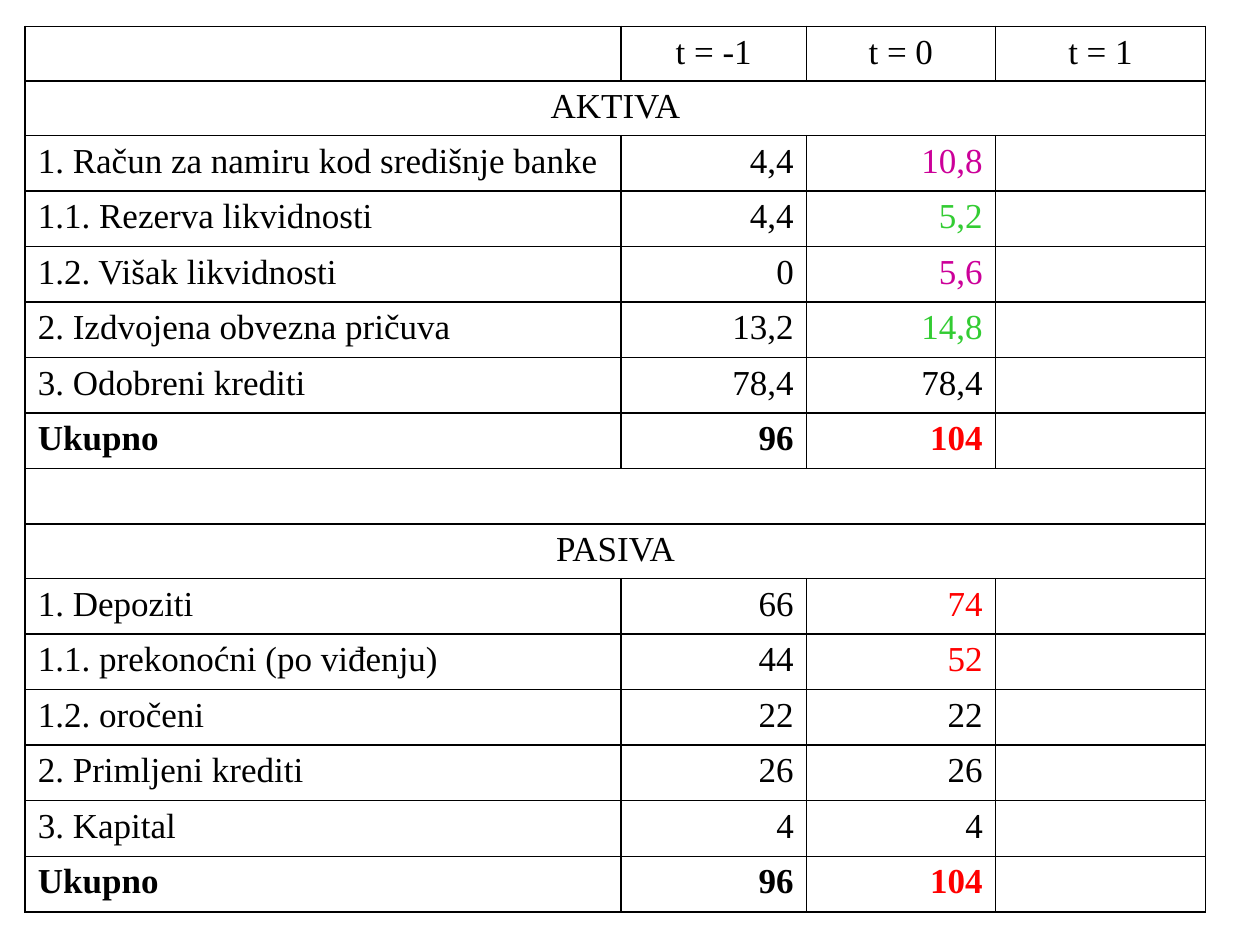
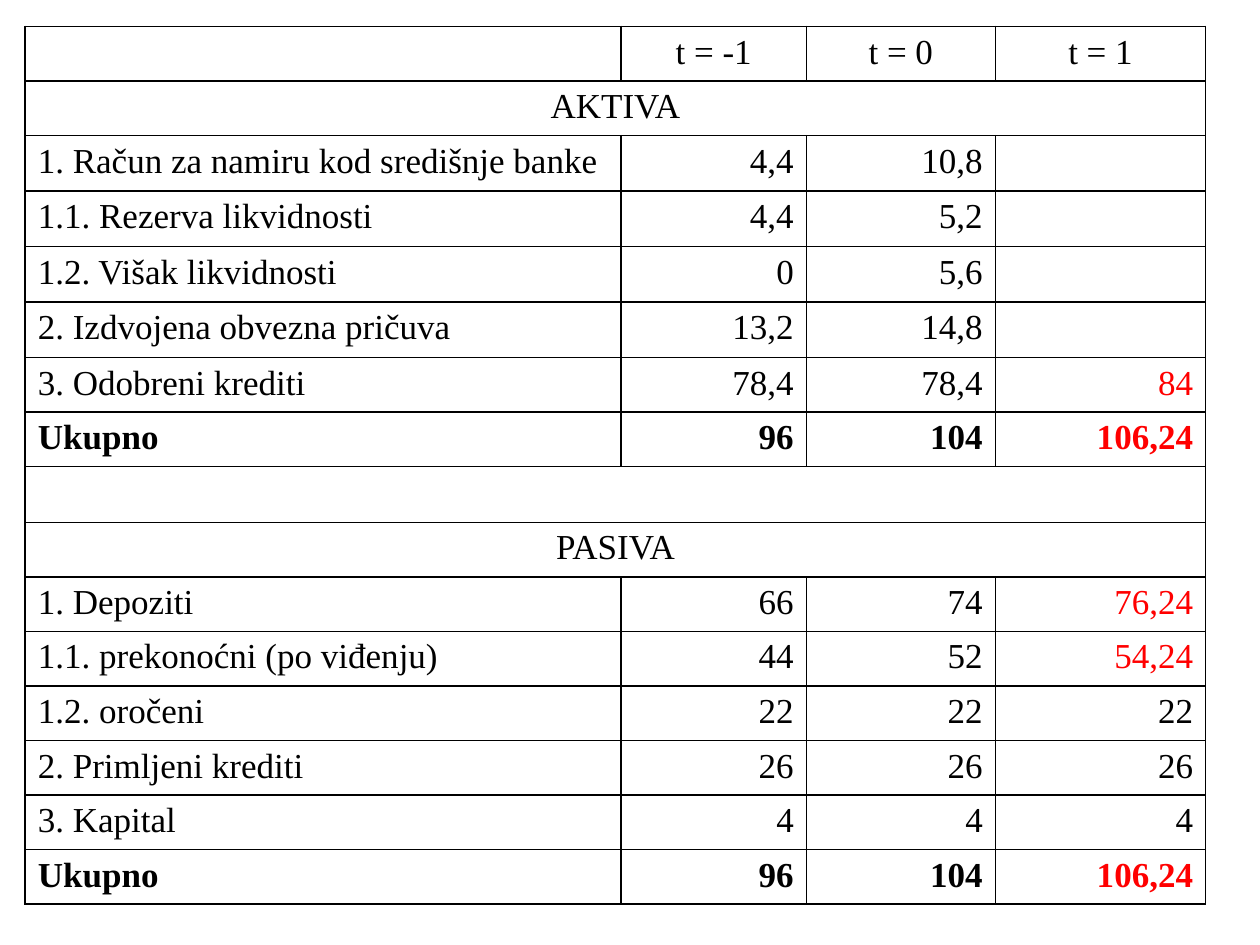
from lxml import etree
from pptx import Presentation
from pptx.dml.color import RGBColor
from pptx.enum.text import PP_ALIGN
from pptx.oxml.ns import qn
from pptx.util import Inches, Pt

LEFT, CENTER, RIGHT = PP_ALIGN.LEFT, PP_ALIGN.CENTER, PP_ALIGN.RIGHT

COLORS = {"text": "000000", "paper": "FFFFFF", "border": "000000",
          "changed": "FF0000", "surplus": "CC0099", "reserve": "33CC33"}
FONT, FONT_SIZE = "Times New Roman", Pt(20)
BORDER_WIDTH = Pt(1)

PERIODS = ["t = -1", "t = 0", "t = 1"]
TOTAL = "Ukupno"
ASSETS = [
    ("1. Račun za namiru kod središnje banke", "4,4", "10,8"),
    ("1.1. Rezerva likvidnosti", "4,4", "5,2"),
    ("1.2. Višak likvidnosti", "0", "5,6"),
    ("2. Izdvojena obvezna pričuva", "13,2", "14,8"),
    ("3. Odobreni krediti", "78,4", "78,4"),
    (TOTAL, "96", "104"),
]
LIABILITIES = [
    ("1. Depoziti", "66", "74"),
    ("1.1. prekonoćni (po viđenju)", "44", "52"),
    ("1.2. oročeni", "22", "22"),
    ("2. Primljeni krediti", "26", "26"),
    ("3. Kapital", "4", "4"),
    (TOTAL, "96", "104"),
]

# Per slide: values for t = 1, the column that carries highlights,
# and the highlight of each asset and liability row
BALANCES = [
    {
        "assets_t1": [""] * 6,
        "liabilities_t1": [""] * 6,
        "highlight_column": 2,
        "asset_colors": ["surplus", "reserve", "surplus", "reserve", "text", "changed"],
        "liability_colors": ["changed", "changed", "text", "text", "text", "changed"],
    },
    {
        "assets_t1": ["", "", "", "", "84", "106,24"],
        "liabilities_t1": ["76,24", "54,24", "22", "26", "4", "106,24"],
        "highlight_column": 3,
        "asset_colors": ["text", "text", "text", "text", "changed", "changed"],
        "liability_colors": ["changed", "changed", "text", "text", "text", "changed"],
    },
]

TABLE_LEFT, TABLE_TOP, TABLE_HEIGHT = 0.2, 0.21, 6.93
COLUMN_WIDTHS = [4.73, 1.47, 1.5, 1.67]


def add_borders(cell):
    properties = cell._tc.get_or_add_tcPr()
    for side in ("a:lnL", "a:lnR", "a:lnT", "a:lnB"):
        line = etree.SubElement(properties, qn(side), w=str(BORDER_WIDTH))
        fill = etree.SubElement(line, qn("a:solidFill"))
        etree.SubElement(fill, qn("a:srgbClr"), val=COLORS["border"])


def write(cell, text, align, color="text", bold=False):
    paragraph = cell.text_frame.paragraphs[0]
    paragraph.alignment = align
    paragraph.font.size = FONT_SIZE
    if not text:
        return
    run = paragraph.add_run()
    run.text = text
    run.font.name = FONT
    run.font.size = FONT_SIZE
    run.font.bold = bold
    run.font.color.rgb = RGBColor.from_string(COLORS[color])


def write_band(table, row, text):
    """Merge a full row and centre its heading, if any."""
    table.cell(row, 0).merge(table.cell(row, len(COLUMN_WIDTHS) - 1))
    write(table.cell(row, 0), text, CENTER)


def write_section(table, top, heading, items, t1_values, colors, highlight_column):
    """Write a heading band and its items; return the next free row."""
    write_band(table, top, heading)
    for row, (item, t1, color) in enumerate(zip(items, t1_values, colors), top + 1):
        for column, text in enumerate((*item, t1)):
            write(table.cell(row, column), text,
                  RIGHT if column else LEFT,
                  color if column == highlight_column else "text",
                  bold=item[0] == TOTAL)
    return top + 1 + len(items)


def add_balance(slide, balance):
    row_count = len(ASSETS) + len(LIABILITIES) + 4
    table = slide.shapes.add_table(
        row_count, len(COLUMN_WIDTHS), Inches(TABLE_LEFT), Inches(TABLE_TOP),
        Inches(sum(COLUMN_WIDTHS)), Inches(TABLE_HEIGHT)).table
    table.first_row = table.horz_banding = False
    for column, width in zip(table.columns, COLUMN_WIDTHS):
        column.width = Inches(width)
    for cell in table.iter_cells():
        add_borders(cell)
        cell.fill.solid()
        cell.fill.fore_color.rgb = RGBColor.from_string(COLORS["paper"])

    for column, period in enumerate(PERIODS, 1):
        write(table.cell(0, column), period, CENTER)
    highlight_column = balance["highlight_column"]
    gap_row = write_section(table, 1, "AKTIVA", ASSETS, balance["assets_t1"],
                            balance["asset_colors"], highlight_column)
    write_band(table, gap_row, "")
    write_section(table, gap_row + 1, "PASIVA", LIABILITIES, balance["liabilities_t1"],
                  balance["liability_colors"], highlight_column)


def main():
    presentation = Presentation()
    presentation.slide_width, presentation.slide_height = Inches(10), Inches(7.5)
    blank = presentation.slide_layouts[6]
    for balance in BALANCES:
        add_balance(presentation.slides.add_slide(blank), balance)
    presentation.save("out.pptx")


if __name__ == "__main__":
    main()
